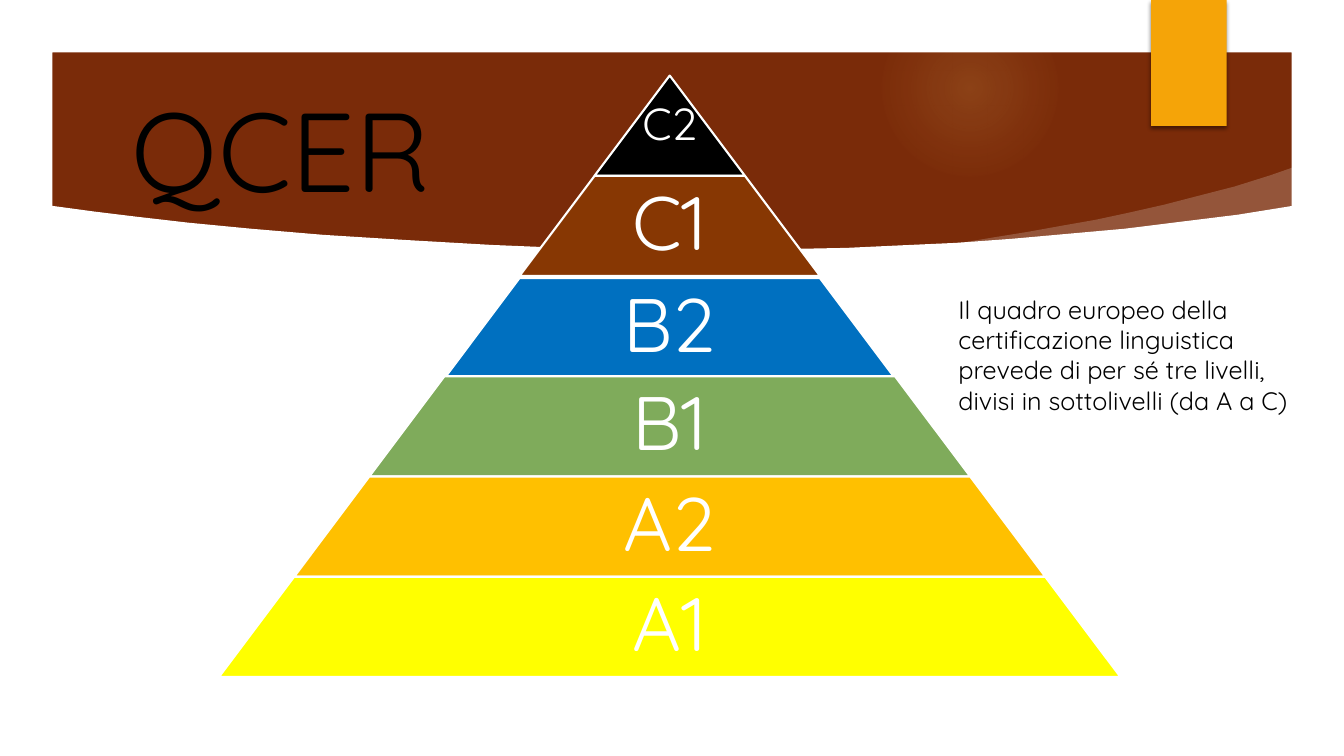
import pptx
import pptx.dml.color
import pptx.enum.shapes
import pptx.enum.text
import pptx.oxml
import pptx.oxml.ns
import pptx.util

Pt = pptx.util.Pt
RGB = pptx.dml.color.RGBColor.from_string
SHAPE = pptx.enum.shapes.MSO_SHAPE
ALIGN = pptx.enum.text.PP_ALIGN
ANCHOR = pptx.enum.text.MSO_ANCHOR
AUTO = pptx.enum.text.MSO_AUTO_SIZE

TITLE = "QCER"
NOTE = ("Il quadro europeo della certificazione linguistica prevede di per sé "
        "tre livelli, divisi in sottolivelli (da A a C)")

# label, fill, small vertical shift; from the tip down
LEVELS = [
    ("C2", "000000", 0),
    ("C1", "873703", 0),
    ("B2", "0070C0", 1.5),
    ("B1", "7FAB5B", 0),
    ("A2", "FFC000", 0),
    ("A1", "FFFF00", 0),
]

THEME = {
    "font": "Quicksand",
    "band": "7A2B09", "paper": "FFFFFF", "ink": "000000",
    "tab": "F5A408", "glow": "FAC96A",
    "title": 80, "level": 54, "tip": 32, "note": 18,
}

WIDTH, HEIGHT = 960, 540
MARGIN = 37.44
APEX_X, APEX_Y = 478.4, 54
TIER_H, TIER_STEP, TIER_GROWTH = 71.5, 71.6, 107.3
TRAPEZOID_SLOPE = 0.75
LABEL_SHARE = 0.65

# lower edge of the band, right to left
BAND_EDGE = [
    (924.5, 146.9), (884.2, 153.4), (843.8, 158.4), (803.5, 163.4),
    (763.2, 167), (722.9, 170.6), (683.3, 173.5), (643.7, 175.3),
    (604.8, 177.1), (547.2, 178.2), (491, 178.6), (437, 177.8),
    (385.2, 176.4), (351.4, 175), (288.7, 171.4), (231.1, 167.8),
    (179.3, 163.4), (134.6, 159.1), (97.2, 154.8), (67.7, 151.2),
    (36, 146.9),
]
SHEEN = [
    (672.5, 180), (716.4, 181), (866.2, 165.6), (928.1, 154.1), (923.8, 119.5),
    (907.2, 125.3), (882, 133.2), (856.8, 139.7), (831.6, 146.2),
    (806.4, 151.9), (782.6, 157), (758.2, 161.3), (734.4, 165.6),
    (712.1, 169.2), (690.5, 172.8), (669.6, 175),
]

prs = pptx.Presentation()
prs.slide_width, prs.slide_height = Pt(WIDTH), Pt(HEIGHT)
s = prs.slides.add_slide(prs.slide_layouts[6])
s.background.fill.solid()
s.background.fill.fore_color.rgb = RGB(THEME["band"])


def paint(sp, color):
    sp.shadow.inherit = False
    sp.fill.solid()
    sp.fill.fore_color.rgb = RGB(color)
    sp.line.fill.background()
    return sp


def add_preset(kind, x, y, w, h, color):
    return paint(s.shapes.add_shape(kind, Pt(x), Pt(y), Pt(w), Pt(h)), color)


def add_outline(*contours):
    """Draw closed contours as one paper-coloured shape."""
    first, *rest = [[(Pt(x), Pt(y)) for x, y in c] for c in contours]
    builder = s.shapes.build_freeform(*first[0])
    builder.add_line_segments(first[1:])
    for contour in rest:
        builder.move_to(*contour[0])
        builder.add_line_segments(contour[1:])
    return paint(builder.convert_to_shape(), THEME["paper"])


def add_text(text, x, y, w, h, size, color):
    sp = s.shapes.add_textbox(Pt(x), Pt(y), Pt(w), Pt(h))
    tf = sp.text_frame
    tf.word_wrap = True
    tf.text = text
    font = tf.paragraphs[0].runs[0].font
    font.name, font.size, font.color.rgb = THEME["font"], Pt(size), RGB(color)
    return tf


def add_glow(x, y, size, stops):
    """Add a disc that fades outwards; stops are (position, opacity) in percent."""
    sp = add_preset(SHAPE.OVAL, x, y, size, size, THEME["glow"])
    marks = "".join(
        f'<a:gs pos="{pos * 1000}"><a:srgbClr val="{THEME["glow"]}">'
        f'<a:alpha val="{opacity * 1000}"/></a:srgbClr></a:gs>'
        for pos, opacity in stops)
    gradient = pptx.oxml.parse_xml(
        f'<a:gradFill {pptx.oxml.ns.nsdecls("a")} rotWithShape="1">'
        f'<a:gsLst>{marks}</a:gsLst><a:path path="circle">'
        '<a:fillToRect l="50000" t="50000" r="50000" b="50000"/></a:path></a:gradFill>')
    sp_pr = sp.element.spPr
    sp_pr.replace(sp_pr.find(pptx.oxml.ns.qn("a:solidFill")), gradient)


def add_backdrop():
    add_glow(630, 0, 126, [(0, 14), (36, 7), (73, 0), (100, 0)])
    sheen = add_outline(SHEEN)
    color = sheen.element.spPr.find(".//" + pptx.oxml.ns.qn("a:srgbClr"))
    color.append(pptx.oxml.parse_xml(
        f'<a:alpha {pptx.oxml.ns.nsdecls("a")} val="20000"/>'))
    add_outline(BAND_EDGE + [(36, 504), (924.5, 504)])
    right, bottom = WIDTH - MARGIN, HEIGHT - MARGIN
    add_outline(
        [(0, 0), (0, HEIGHT), (WIDTH, HEIGHT), (WIDTH, 0)],
        [(right, bottom), (MARGIN, bottom), (MARGIN, MARGIN), (right, MARGIN)])


def add_tab():
    tab = add_preset(SHAPE.RECTANGLE, 822.2, 0, 54, 90, THEME["tab"])
    effects = tab.element.spPr.find(pptx.oxml.ns.qn("a:effectLst"))
    effects.append(pptx.oxml.parse_xml(
        f'<a:outerShdw {pptx.oxml.ns.nsdecls("a")} blurRad="{Pt(3)}" dist="{Pt(2)}" '
        'dir="5400000" rotWithShape="0"><a:srgbClr val="000000">'
        '<a:alpha val="45000"/></a:srgbClr></a:outerShdw>'))


def add_pyramid():
    for i, (label, color, shift) in enumerate(LEVELS):
        tip = i == 0
        w = TIER_GROWTH * (i + 1)
        y = APEX_Y + TIER_STEP * i + shift
        tier = add_preset(SHAPE.TRAPEZOID, APEX_X - w / 2, y, w, TIER_H, color)
        tier.adjustments[0] = TRAPEZOID_SLOPE
        tier.line.color.rgb = RGB(THEME["paper"])
        tier.line.width = Pt(1.5)

        label_w = w if tip else w * LABEL_SHARE
        tf = add_text(label, APEX_X - label_w / 2, y, label_w, TIER_H,
                      THEME["tip" if tip else "level"], THEME["paper"])
        inset = Pt(3 if tip else 5)
        tf.margin_left = tf.margin_right = tf.margin_top = tf.margin_bottom = inset
        tf.vertical_anchor = ANCHOR.MIDDLE
        p = tf.paragraphs[0]
        p.alignment, p.line_spacing = ALIGN.CENTER, 0.9


add_backdrop()
add_tab()
add_pyramid()
for text, box, size in [
    (TITLE, (87.1, 54, 342.7, 104.4), THEME["title"]),
    (NOTE, (677.5, 206.6, 265, 94.3), THEME["note"]),
]:
    add_text(text, *box, size, THEME["ink"]).auto_size = AUTO.SHAPE_TO_FIT_TEXT

prs.save("out.pptx")
